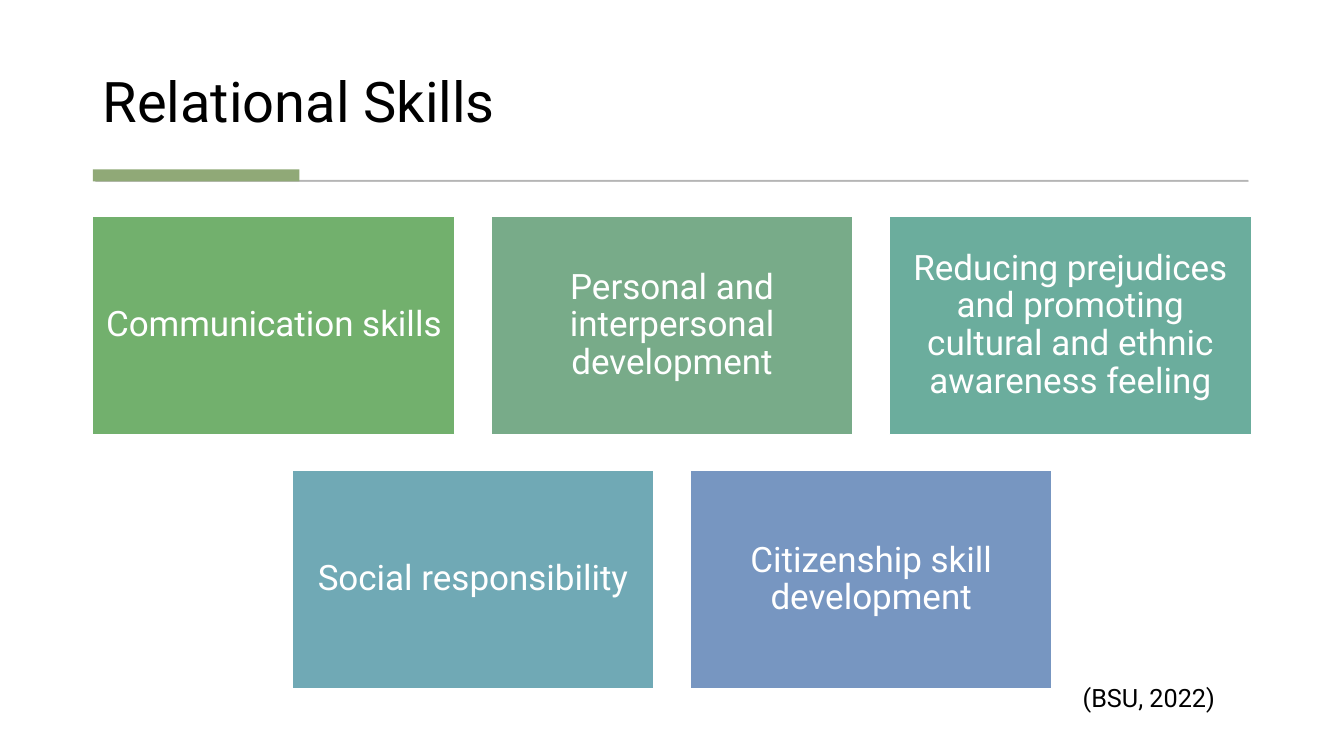
import pptx
import pptx.dml.color
import pptx.enum.shapes
import pptx.enum.text
import pptx.oxml
import pptx.oxml.ns
import pptx.util

Inches, Pt = pptx.util.Inches, pptx.util.Pt
ALIGN, ANCHOR = pptx.enum.text.PP_ALIGN, pptx.enum.text.MSO_ANCHOR

SLIDE_W, SLIDE_H = 13.33, 7.5
LEFT, CONTENT_W = 0.92, 11.49
GAP = 0.36
COLUMNS = 3
SKILL_ROWS = [
    [("Communication skills", "72B06D"),
     ("Personal and interpersonal development", "78AB89"),
     ("Reducing prejudices and promoting cultural and ethnic awareness feeling",
      "6BAD9D")],
    [("Social responsibility", "70A9B5"),
     ("Citizenship skill development", "7796C1")],
]


def color(hex_code):
    return pptx.dml.color.RGBColor.from_string(hex_code)


def apply(target, formats):
    for name, value in formats.items():
        setattr(target, name, value)


def write(shape, text, size, hex_code, frame_format, paragraph_format):
    frame = shape.text_frame
    frame.text = text
    apply(frame, {"word_wrap": True, **frame_format})
    paragraph = frame.paragraphs[0]
    apply(paragraph, paragraph_format)
    font = paragraph.runs[0].font
    apply(font, {"name": "Roboto", "size": Pt(size)})
    font.color.rgb = color(hex_code)


def add_block(slide, box, fill):
    block = slide.shapes.add_shape(
        pptx.enum.shapes.MSO_SHAPE.RECTANGLE, *map(Inches, box))
    block.shadow.inherit = False
    block.fill.solid()
    block.fill.fore_color.rgb = color(fill)
    block.line.fill.background()
    return block


def fade(color_element, percent):
    alpha = pptx.oxml.parse_xml(
        f'<a:alpha {pptx.oxml.ns.nsdecls("a")} val="{percent * 1000}"/>')
    color_element.append(alpha)


def add_heading(slide, box):
    """Title above a thin rule with a thick accent at its left end."""
    left, top, width, height = box
    title = slide.shapes.title
    apply(title, dict(zip(("left", "top", "width", "height"),
                          map(Inches, (left, top, width, 1.11)))))
    write(title, "Relational Skills", 40, "000000",
          {"vertical_anchor": ANCHOR.BOTTOM,
           "auto_size": pptx.enum.text.MSO_AUTO_SIZE.NONE},
          {"alignment": ALIGN.LEFT, "line_spacing": 0.9})

    # Translucent rule
    bottom = top + height
    rule = add_block(slide, (left + 0.03, bottom - 0.01, width - 0.06, 0.01),
                     "595959")
    rule.line.color.rgb = color("595959")
    rule.line.width = Pt(0.75)
    for tint in rule._element.spPr.iter(pptx.oxml.ns.qn("a:srgbClr")):
        fade(tint, 30)

    # Accent
    add_block(slide, (left, bottom - 0.12, 2.05, 0.12), "90A977")


def add_skill_grid(slide, box):
    """Rows of equal cards, each row centred in the box."""
    left, top, width, height = box
    card_w = (width - GAP * (COLUMNS - 1)) / COLUMNS
    card_h = (height - GAP * (len(SKILL_ROWS) - 1)) / len(SKILL_ROWS)
    margins = dict.fromkeys(
        ("margin_left", "margin_top", "margin_right", "margin_bottom"),
        Inches(0.1))
    for row, skills in enumerate(SKILL_ROWS):
        row_w = len(skills) * (card_w + GAP) - GAP
        row_left = left + (width - row_w) / 2
        for column, (skill, fill) in enumerate(skills):
            card = add_block(slide, (row_left + column * (card_w + GAP),
                                     top + row * (card_h + GAP),
                                     card_w, card_h), fill)
            card.line.color.rgb = color("FFFFFF")
            card.line.width = Pt(1)
            write(card, skill, 25, "FFFFFF",
                  {"vertical_anchor": ANCHOR.MIDDLE, **margins},
                  {"alignment": ALIGN.CENTER, "line_spacing": 0.9})


def add_citation(slide, box):
    citation = slide.shapes.add_textbox(*map(Inches, box))
    write(citation, "(BSU, 2022)", 18, "000000",
          {"auto_size": pptx.enum.text.MSO_AUTO_SIZE.SHAPE_TO_FIT_TEXT},
          {"alignment": ALIGN.LEFT})


def main():
    deck = pptx.Presentation()
    apply(deck, {"slide_width": Inches(SLIDE_W),
                 "slide_height": Inches(SLIDE_H)})
    slide = deck.slides.add_slide(deck.slide_layouts.get_by_name("Title Only"))
    add_heading(slide, (LEFT, 0.28, CONTENT_W, 1.52))
    add_skill_grid(slide, (LEFT, 2.15, CONTENT_W, 4.68))
    add_citation(slide, (10.64, 6.72, 1.74, 0.4))
    deck.save("out.pptx")


if __name__ == "__main__":
    main()
